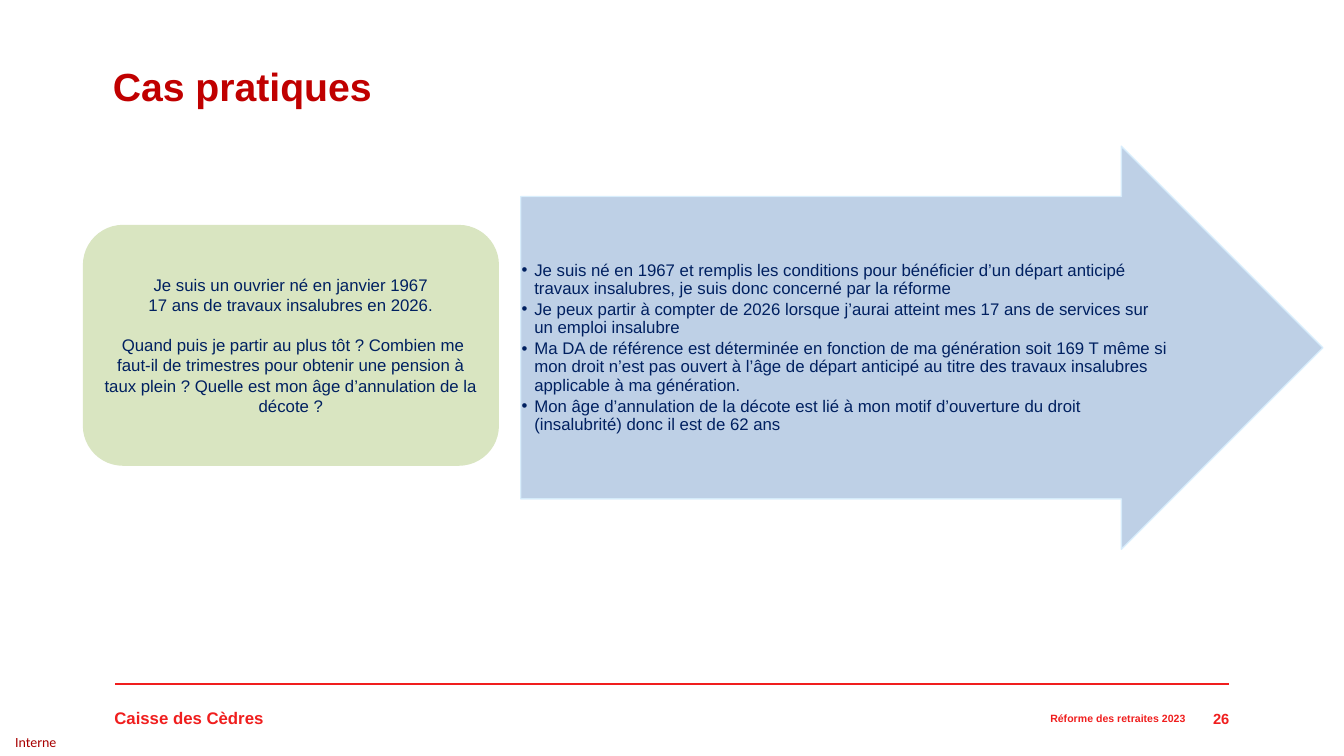
import pptx
import pptx.util
import pptx.dml.color
import pptx.enum.shapes
import pptx.enum.text
import pptx.oxml.ns
import lxml.etree

Pt = pptx.util.Pt
RGBColor = pptx.dml.color.RGBColor
PP_ALIGN = pptx.enum.text.PP_ALIGN
ANCHOR = pptx.enum.text.MSO_ANCHOR
SHAPE = pptx.enum.shapes.MSO_SHAPE
qn = pptx.oxml.ns.qn

RED = RGBColor(0xF0, 0x1E, 0x1E)
TITLE_RED = RGBColor(0xC0, 0x00, 0x00)
LABEL_RED = RGBColor(0xA8, 0x00, 0x00)
NAVY = RGBColor(0x00, 0x20, 0x60)
BLUE = RGBColor(0xB7, 0xCB, 0xE4)
PALE_BLUE = RGBColor(0xD8, 0xEE, 0xFD)
GREEN = RGBColor(0xD9, 0xE5, 0xC1)

question = [
    "Je suis un ouvrier né en janvier 1967",
    "17 ans de travaux insalubres en 2026.",
    " Quand puis je partir au plus tôt ? Combien me faut-il de trimestres pour obtenir une pension à taux plein ? Quelle est mon âge d’annulation de la décote ?",
]
answers = [
    "Je suis né en 1967 et remplis les conditions pour bénéficier d’un départ anticipé travaux insalubres, je suis donc concerné par la réforme",
    "Je peux partir à compter de 2026 lorsque j’aurai atteint mes 17 ans de services sur un emploi insalubre",
    "Ma DA de référence est déterminée en fonction de ma génération soit 169 T même si mon droit n’est pas ouvert à l’âge de départ anticipé au titre des travaux insalubres applicable à ma génération.",
    "Mon âge d’annulation de la décote est lié à mon motif d’ouverture du droit (insalubrité) donc il est de 62 ans",
]


def write(frame, paragraphs, size, color, bold=False, font="Arial", align=PP_ALIGN.LEFT,
          anchor=ANCHOR.MIDDLE, insets=(7.2, 3.6, 7.2, 3.6)):
    frame.text = "\n".join(paragraphs)
    frame.word_wrap = True
    frame.vertical_anchor = anchor
    frame.margin_left, frame.margin_top, frame.margin_right, frame.margin_bottom = map(Pt, insets)
    for paragraph in frame.paragraphs:
        paragraph.alignment = align
        for run in paragraph.runs:
            run.font.name = font
            run.font.size = Pt(size)
            run.font.bold = bold
            run.font.color.rgb = color


def make_translucent(fill):
    color = fill._xPr.find(qn("a:solidFill"))[0]
    lxml.etree.SubElement(color, qn("a:alpha")).set("val", "90000")


deck = pptx.Presentation()
deck.slide_width, deck.slide_height = Pt(960), Pt(540)
slide = deck.slides.add_slide(deck.slide_layouts[6])
shapes = slide.shapes

footer_rule = shapes.add_connector(
    pptx.enum.shapes.MSO_CONNECTOR.STRAIGHT, Pt(82.5), Pt(488.7), Pt(878), Pt(488.7))
footer_rule.line.color.rgb = RED
footer_rule.line.width = Pt(1.5)
lxml.etree.SubElement(footer_rule._element.spPr, qn("a:effectLst"))

title = shapes.add_textbox(Pt(73.5), Pt(44.6), Pt(822), Pt(36.7)).text_frame
write(title, ["Cas pratiques"], 28, TITLE_RED, bold=True, anchor=ANCHOR.TOP)
title.paragraphs[0].line_spacing = 0.9

organisation = shapes.add_textbox(Pt(74.6), Pt(502), Pt(160), Pt(21.8)).text_frame
write(organisation, ["Caisse des Cèdres"], 12, RED, bold=True, anchor=ANCHOR.TOP)

confidentiality = shapes.add_textbox(Pt(0), Pt(519.5), Pt(51), Pt(21)).text_frame
write(confidentiality, ["Interne"], 10, LABEL_RED, font="Calibri", insets=(10.8, 0, 0, 0))

footer = shapes.add_textbox(Pt(540.7), Pt(502), Pt(313.2), Pt(22.3)).text_frame
write(footer, ["Réforme des retraites 2023"], 7.5, RED, bold=True, align=PP_ALIGN.RIGHT)

page_number = shapes.add_textbox(Pt(842.7), Pt(502), Pt(42.5), Pt(22.3)).text_frame
write(page_number, ["26"], 10.5, RED, bold=True, align=PP_ALIGN.RIGHT)

answer_arrow = shapes.add_shape(SHAPE.RIGHT_ARROW, Pt(372), Pt(104.4), Pt(573), Pt(288))
answer_arrow.adjustments[0] = 0.75
answer_arrow.adjustments[1] = 0.5
answer_arrow.shadow.inherit = False
answer_arrow.fill.solid()
answer_arrow.fill.fore_color.rgb = BLUE
answer_arrow.line.color.rgb = PALE_BLUE
answer_arrow.line.width = Pt(1)
make_translucent(answer_arrow.fill)
make_translucent(answer_arrow.line.fill)

answer_list = shapes.add_textbox(Pt(372), Pt(140.4), Pt(465), Pt(216)).text_frame
write(answer_list, answers, 12, NAVY, insets=(0.7, 0.7, 0.7, 0.7))
for answer in answer_list.paragraphs:
    answer.line_spacing = 0.9
    answer.space_after = Pt(2.2)
    properties = answer._p.get_or_add_pPr()
    properties.set("marL", str(Pt(9)))
    properties.set("indent", str(-Pt(9)))
    lxml.etree.SubElement(properties, qn("a:buFont")).set("typeface", "Arial")
    lxml.etree.SubElement(properties, qn("a:buChar")).set("char", "•")

question_card = shapes.add_shape(SHAPE.ROUNDED_RECTANGLE, Pt(59.2), Pt(160.6), Pt(297.2), Pt(172.1))
question_card.shadow.inherit = False
question_card.fill.solid()
question_card.fill.fore_color.rgb = GREEN
question_card.line.fill.background()
write(question_card.text_frame, question, 12, NAVY, align=PP_ALIGN.CENTER,
      insets=(3.8, 2.2, 3.8, 2.2))
question_card.text_frame.paragraphs[2].space_before = Pt(14)

deck.save("out.pptx")
